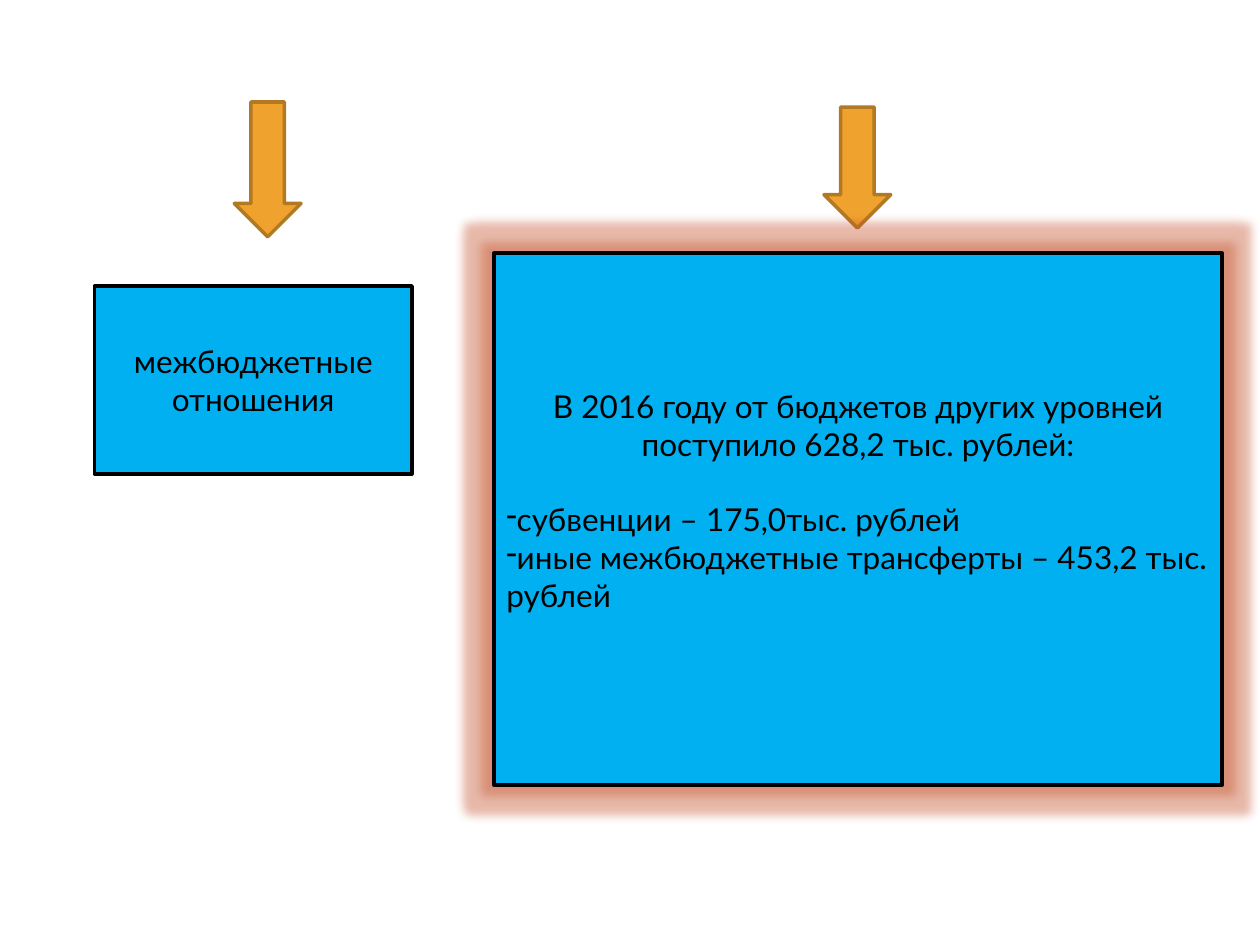
from dataclasses import dataclass

from lxml import etree
from pptx import Presentation
from pptx import util as u
from pptx.dml.color import RGBColor
from pptx.enum import shapes, text
from pptx.oxml.ns import qn


@dataclass(frozen=True)
class Theme:
    box: str = "00B0F0"
    ink: str = "000000"
    arrow: str = "F0A22E"
    arrow_edge: str = "B27822"
    glow: str = "C5502A"
    font: str = "Lato"
    size: float = 18
    line_height: float = 21.6
    line: float = 2
    glow_radius: float = 11


@dataclass(frozen=True)
class Area:
    """Place on the slide, in inches."""
    left: float
    top: float
    width: float
    height: float


THEME = Theme()
ARROWS = [Area(1.86, 0.81, 0.53, 1.07), Area(6.54, 0.85, 0.53, 0.96)]
TOPIC_BOX = Area(0.75, 2.27, 2.52, 1.49)
INCOME_BOX = Area(3.92, 2.01, 5.78, 4.22)
TRANSFERS = ["субвенции – 175,0тыс. рублей",
             "иные межбюджетные трансферты – 453,2 тыс. рублей"]


def add_figure(s, kind, area: Area, fill: str, edge: str):
    sp = s.shapes.add_shape(kind, u.Inches(area.left), u.Inches(area.top),
                            u.Inches(area.width), u.Inches(area.height))
    sp.shadow.inherit = False
    sp.fill.solid()
    sp.fill.fore_color.rgb = RGBColor.from_string(fill)
    sp.line.color.rgb = RGBColor.from_string(edge)
    sp.line.width = u.Pt(THEME.line)
    return sp


def add_box(s, area: Area):
    sp = add_figure(s, shapes.MSO_SHAPE.RECTANGLE, area, THEME.box, THEME.ink)
    sp.text_frame.word_wrap = True
    sp.text_frame.vertical_anchor = text.MSO_ANCHOR.MIDDLE
    return sp


def write(tf, words: str, *, align=text.PP_ALIGN.CENTER, bullet: str = "",
          gap_before: float = 0) -> None:
    """Fill the first paragraph while it is empty, then append new ones."""
    p = tf.paragraphs[0] if not tf.text else tf.add_paragraph()
    p.alignment = align
    p.space_before = u.Pt(gap_before)
    if bullet:
        pPr = p._p.get_or_add_pPr()
        pPr.set("marL", "0")
        pPr.set("indent", "0")
        etree.SubElement(pPr, qn("a:buChar"), char=bullet)
    r = p.add_run()
    r.text = words
    r.font.name = THEME.font
    r.font.size = u.Pt(THEME.size)
    r.font.color.rgb = RGBColor.from_string(THEME.ink)


def add_glow(sp) -> None:
    effects = sp._element.spPr.find(qn("a:effectLst"))
    glow = etree.SubElement(effects, qn("a:glow"), rad=str(u.Pt(THEME.glow_radius)))
    color = etree.SubElement(glow, qn("a:srgbClr"), val=THEME.glow)
    etree.SubElement(color, qn("a:alpha"), val="40000")


def main() -> None:
    prs = Presentation()
    prs.slide_width, prs.slide_height = u.Inches(10), u.Inches(7.5)
    s = prs.slides.add_slide(prs.slide_layouts[6])

    for area in ARROWS:
        add_figure(s, shapes.MSO_SHAPE.DOWN_ARROW, area, THEME.arrow, THEME.arrow_edge)

    topic = add_box(s, TOPIC_BOX)
    write(topic.text_frame, "межбюджетные отношения")

    income = add_box(s, INCOME_BOX)
    add_glow(income)
    tf = income.text_frame
    tf.margin_bottom = u.Inches(0.35)
    write(tf, "В 2016 году от бюджетов других уровней поступило 628,2 тыс. рублей:")
    for i, transfer in enumerate(TRANSFERS):
        write(tf, transfer, align=text.PP_ALIGN.LEFT, bullet="-",
              gap_before=0 if i else THEME.line_height)

    prs.save("out.pptx")


if __name__ == "__main__":
    main()
